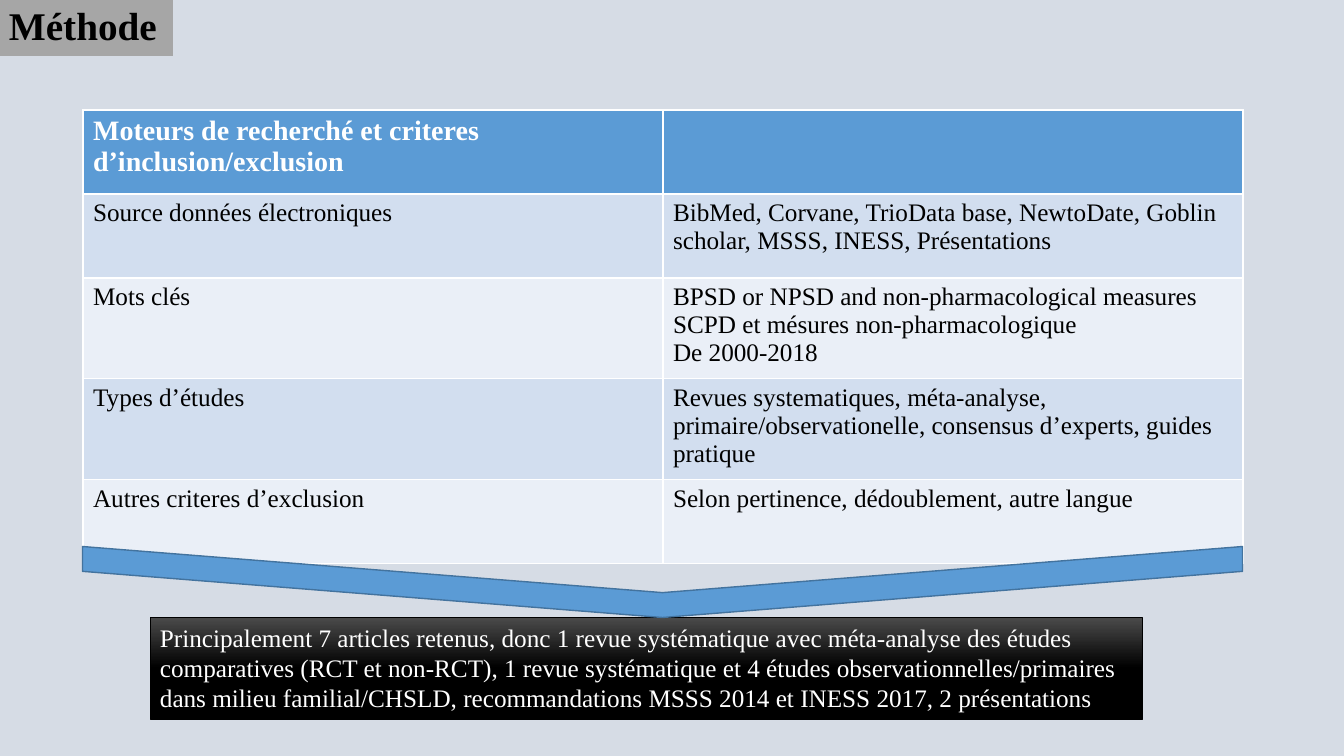
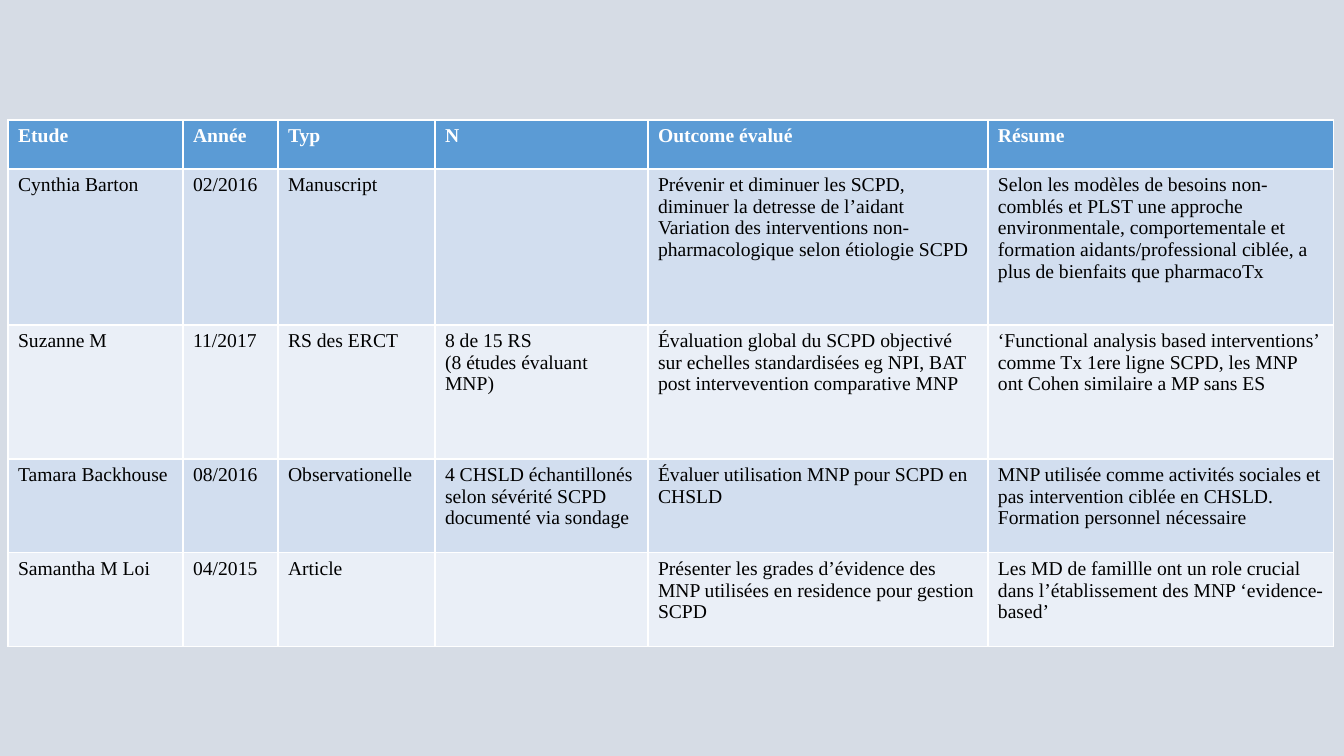
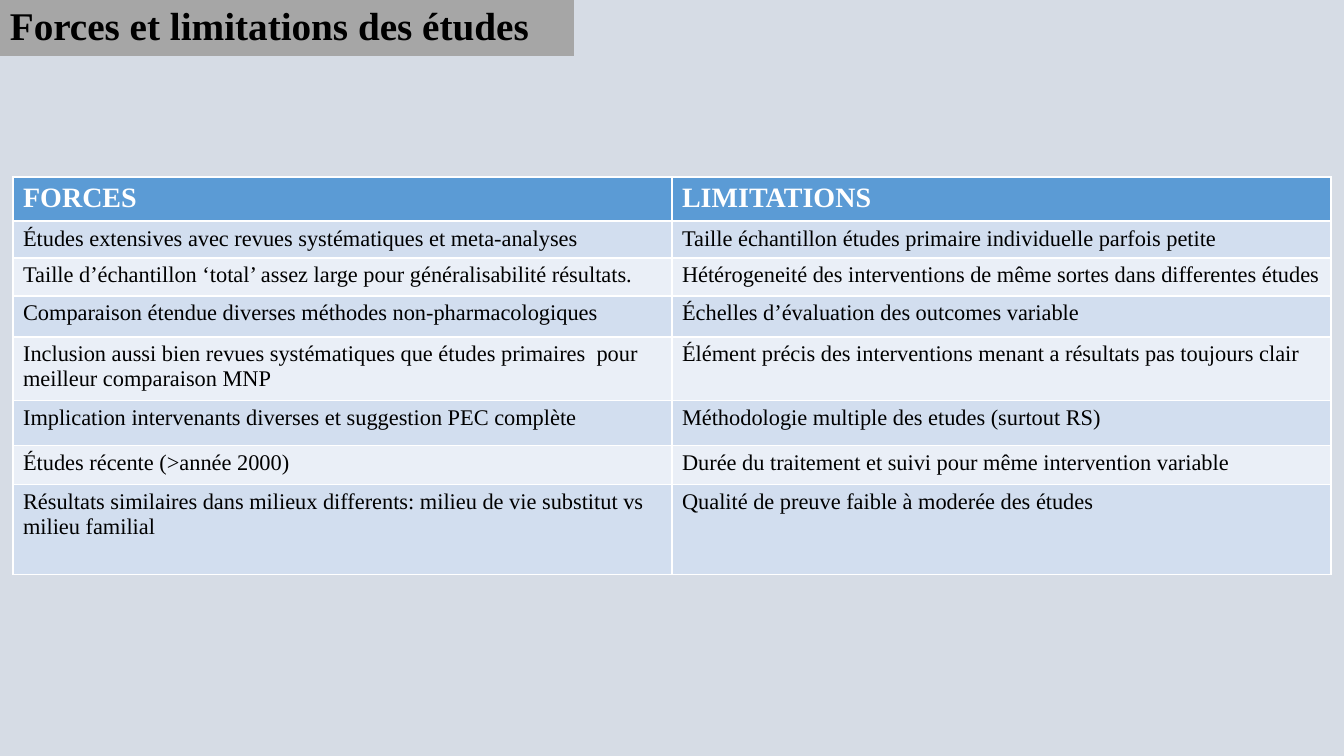
"""Build three slides on a study review: method, studies, strengths and limits."""
from pptx import Presentation
from pptx.dml.color import RGBColor
from pptx.enum.shapes import MSO_SHAPE
from pptx.enum.text import MSO_ANCHOR, PP_ALIGN
from pptx.util import Pt

PX = 914400 / 100.8
HUES = {
    "back": "D6DCE5", "band": "A6A6A6", "blue": "5B9BD5", "edge": "43739E",
    "odd": "D2DEEF", "even": "EAEFF7", "ink": "000000", "white": "FFFFFF",
    "smoke": "4B4B4B",
}
FONT = "Times New Roman"
FORMS = {
    "title": {"name": FONT, "bold": True, "size": Pt(28)},
    "head": {"name": FONT, "bold": True},
    "body": {"name": FONT, "bold": False},
    "note": {"name": FONT, "size": Pt(18)},
}
NOTE = (
    "Principalement 7 articles retenus, donc 1 revue systématique avec méta-analyse "
    "des études comparatives (RCT et non-RCT), 1 revue systématique et 4 études "
    "observationnelles/primaires dans milieu familial/CHSLD, recommandations MSSS 2014 "
    "et INESS 2017, 2 présentations"
)
PAGES = [
    {
        "title": "Méthode", "band": (-1, 174),
        "at": (83, 110), "cols": [580] * 2, "rows": [84] * 5, "sizes": (20, 18),
        "cells": [
            ("Moteurs de recherché et criteres d’inclusion/exclusion", ""),
            ("Source données électroniques",
             "BibMed, Corvane, TrioData base, NewtoDate, Goblin scholar, MSSS, INESS, Présentations"),
            ("Mots clés",
             "BPSD or NPSD and non-pharmacological measures\n"
             "SCPD et mésures non-pharmacologique\nDe 2000-2018"),
            ("Types d’études",
             "Revues systematiques, méta-analyse, primaire/observationelle, "
             "consensus d’experts, guides pratique"),
            ("Autres criteres d’exclusion", "Selon pertinence, dédoublement, autre langue"),
        ],
    },
    {
        "at": (8, 120), "cols": [175, 95, 157, 213, 340, 346],
        "rows": [49, 156, 134, 94, 94], "sizes": (14, 14),
        "cells": [
            ("Etude", "Année", "Typ", "N", "Outcome évalué", "Résume"),
            ("Cynthia Barton", "02/2016", "Manuscript", "",
             "Prévenir et diminuer les SCPD, diminuer la detresse de l’aidant\n"
             "Variation des interventions non-pharmacologique selon étiologie SCPD",
             "Selon les modèles de besoins non-comblés et PLST une approche environmentale, "
             "comportementale et formation aidants/professional ciblée, a plus de bienfaits "
             "que pharmacoTx"),
            ("Suzanne M", "11/2017", "RS des ERCT", "8 de 15 RS\n(8 études évaluant MNP)",
             "Évaluation global du SCPD objectivé sur echelles standardisées eg NPI, BAT "
             "post intervevention comparative MNP",
             "‘Functional analysis based interventions’ comme Tx 1ere ligne SCPD, les MNP "
             "ont Cohen similaire a MP sans ES"),
            ("Tamara Backhouse", "08/2016", "Observationelle",
             "4 CHSLD échantillonés selon sévérité SCPD documenté via sondage",
             "Évaluer utilisation MNP pour SCPD en CHSLD",
             "MNP utilisée comme activités sociales et pas intervention ciblée en CHSLD. "
             "Formation personnel nécessaire"),
            ("Samantha M Loi", "04/2015", "Article", "",
             "Présenter les grades d’évidence des MNP utilisées en residence pour gestion SCPD",
             "Les MD de famillle ont un role crucial dans l’établissement des MNP ‘evidence-based’"),
        ],
    },
    {
        "title": "Forces et limitations des études", "band": (0, 574),
        "at": (13, 177), "cols": [659] * 2,
        "rows": [44, 36, 38, 41, 58, 45, 39, 90], "sizes": (20, 16),
        "cells": [
            ("FORCES", "LIMITATIONS"),
            ("Études extensives avec revues systématiques et meta-analyses",
             "Taille échantillon études primaire individuelle parfois petite"),
            ("Taille d’échantillon ‘total’ assez large pour généralisabilité résultats.",
             "Hétérogeneité des interventions de même sortes dans differentes études"),
            ("Comparaison étendue diverses méthodes non-pharmacologiques",
             "Échelles d’évaluation des outcomes variable"),
            ("Inclusion aussi bien revues systématiques que études primaires  pour "
             "meilleur comparaison MNP",
             "Élément précis des interventions menant a résultats pas toujours clair"),
            ("Implication intervenants diverses et suggestion PEC complète",
             "Méthodologie multiple des etudes (surtout RS)"),
            ("Études récente (>année 2000)",
             "Durée du traitement et suivi pour même intervention variable"),
            ("Résultats similaires dans milieux differents: milieu de vie substitut vs "
             "milieu familial",
             "Qualité de preuve faible à moderée des études"),
        ],
    },
]


def paint(fill, hue):
    fill.solid()
    fill.fore_color.rgb = RGBColor.from_string(HUES[hue])


def write(frame, text, hue, form):
    frame.text = text
    frame.word_wrap = True
    for para in frame.paragraphs:
        para.alignment = PP_ALIGN.LEFT
        for key, value in form.items():
            setattr(para.font, key, value)
            for run in para.runs:
                setattr(run.font, key, value)
        for run in para.runs:
            run.font.color.rgb = RGBColor.from_string(HUES[hue])


deck = Presentation()
deck.slide_width, deck.slide_height = round(1344 * PX), round(756 * PX)
paint(deck.slide_master.background.fill, "back")

for page in PAGES:
    slide = deck.slides.add_slide(deck.slide_layouts[6])
    if "title" in page:
        left, width = page["band"]
        band = slide.shapes.add_textbox(*(round(n * PX) for n in (left, 0, width, 56)))
        paint(band.fill, "band")
        write(band.text_frame, page["title"], "ink", FORMS["title"])
        band.text_frame.vertical_anchor = MSO_ANCHOR.MIDDLE
        band.text_frame.paragraphs[0].line_spacing = 0.9

    cols, rows = page["cols"], page["rows"]
    box = (*page["at"], sum(cols), sum(rows))
    grid = slide.shapes.add_table(len(rows), len(cols), *(round(n * PX) for n in box)).table
    for col, width in zip(grid.columns, cols):
        col.width = round(width * PX)
    for i, (row, height) in enumerate(zip(grid.rows, rows)):
        row.height = round(height * PX)
        kind, tint, hue = ("body", "odd" if i % 2 else "even", "ink") if i else ("head", "blue", "white")
        form = FORMS[kind] | {"size": Pt(page["sizes"][min(i, 1)])}
        for cell, text in zip(row.cells, page["cells"][i]):
            paint(cell.fill, tint)
            write(cell.text_frame, text, hue, form)

shapes = deck.slides[0].shapes
note = shapes.add_shape(MSO_SHAPE.RECTANGLE, *(round(n * PX) for n in (150, 617, 992, 102)))
note.fill.gradient()
note.fill.gradient_angle = 270
for stop, place, hue in zip(note.fill.gradient_stops, (0, 0.5), ("smoke", "ink")):
    stop.position = place
    stop.color.rgb = RGBColor.from_string(HUES[hue])
write(note.text_frame, NOTE, "white", FORMS["note"])
note.text_frame.vertical_anchor = MSO_ANCHOR.TOP

arrow = shapes.add_shape(MSO_SHAPE.CHEVRON, *(round(n * PX) for n in (627, 2, 71, 1160)))
arrow.rotation = 90
arrow.adjustments[0] = 0.65
paint(arrow.fill, "blue")

for shape, hue, weight in ((note, "ink", 0.5), (arrow, "edge", 1)):
    shape.shadow.inherit = False
    paint(shape.line.fill, hue)
    shape.line.width = Pt(weight)

deck.save("out.pptx")
